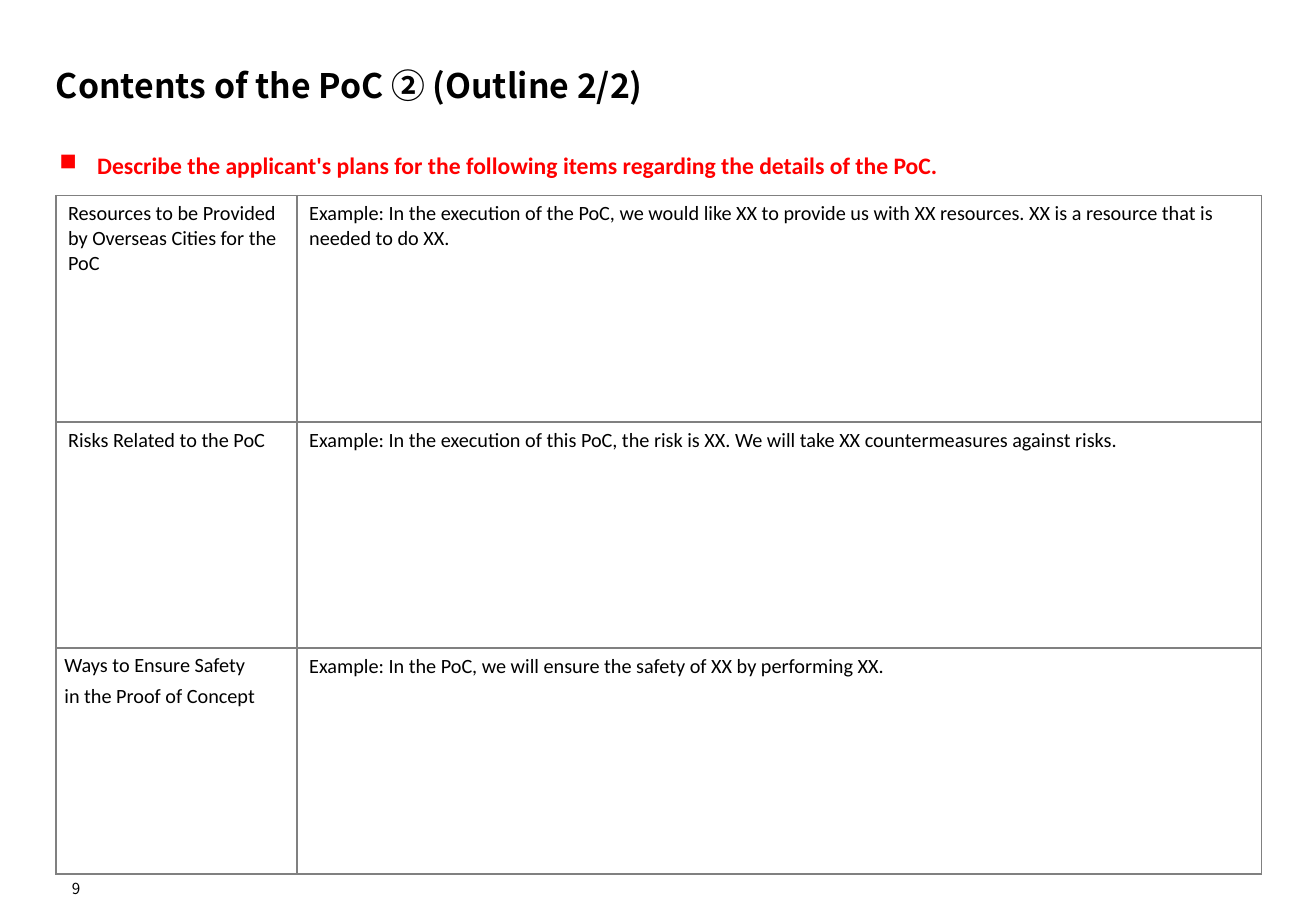
from dataclasses import dataclass

from lxml import etree
from pptx import Presentation
from pptx import util as u
from pptx.dml.color import RGBColor
from pptx.enum import text
from pptx.oxml import ns


@dataclass(frozen=True)
class Theme:
    head: str = "Noto Sans CJK JP"
    body: str = "Calibri"
    ink: str = "000000"
    alert: str = "FF0000"
    rule: str = "808080"
    paper: str = "FFFFFF"
    title: int = 20
    note: int = 14
    cell: int = 12
    number: int = 9


ROWS = [
    (["Resources to be Provided by Overseas Cities for the PoC"],
     ["Example: In the execution of the PoC, we would like XX to provide us with "
      "XX resources. XX is a resource that is needed to do XX."]),
    (["Risks Related to the PoC"],
     ["Example: In the execution of this PoC, the risk is XX. "
      "We will take XX countermeasures against risks."]),
    (["Ways to Ensure Safety", "in the Proof of Concept"],
     ["Example: In the PoC, we will ensure the safety of XX by performing XX."]),
]


def add(parent, tag, **attrs):
    return etree.SubElement(parent, ns.qn(tag), attrs)


class Page:
    """Draws on one slide; lengths are percentages of the slide's size."""

    def __init__(self, deck, theme):
        self.deck, self.theme = deck, theme
        self.slide = deck.slides.add_slide(deck.slide_layouts[6])

    def area(self, left, top, width, height):
        wide, high = self.deck.slide_width, self.deck.slide_height
        return [round(part * size / 100) for part, size in
                zip((left, top, width, height), (wide, high, wide, high))]

    def style(self, para, face, size, color, bold=False):
        font = para.font
        font.name, font.size, font.bold = face, u.Pt(size), bold
        font.color.rgb = RGBColor.from_string(color)
        add(para._p.pPr.find(ns.qn("a:defRPr")), "a:ea", typeface=face)

    def hang(self, para, inches):
        """Hang the first line to the left of the others."""
        props = para._p.get_or_add_pPr()
        props.set("marL", str(u.Inches(inches)))
        props.set("indent", str(-u.Inches(inches)))
        return props

    def label(self, words, area, anchor, inset=0, wrap=True):
        frame = self.slide.shapes.add_textbox(*self.area(*area)).text_frame
        frame.word_wrap, frame.vertical_anchor = wrap, anchor
        frame.margin_left = frame.margin_right = u.Inches(inset)
        frame.margin_top = frame.margin_bottom = u.Inches(inset)
        para = frame.paragraphs[0]
        para.text = words
        return para

    def title(self, words, area):
        para = self.label(words, area, text.MSO_ANCHOR.BOTTOM)
        self.style(para, self.theme.head, self.theme.title, self.theme.ink, True)

    def number(self, words, area):
        para = self.label(words, area, text.MSO_ANCHOR.BOTTOM, wrap=False)
        para.alignment = text.PP_ALIGN.RIGHT
        self.style(para, self.theme.head, self.theme.number, self.theme.ink)

    def note(self, words, area):
        para = self.label(words, area, text.MSO_ANCHOR.MIDDLE, 0.04)
        add(self.hang(para, 0.31), "a:buChar", char="■")
        self.style(para, self.theme.body, self.theme.note, self.theme.alert, True)

    def cell(self, cell, lines):
        props = cell._tc.get_or_add_tcPr()
        for side in "LRTB":
            line = add(props, f"a:ln{side}", w=str(u.Pt(1)))
            add(add(line, "a:solidFill"), "a:srgbClr", val=self.theme.rule)
        cell.fill.solid()
        cell.fill.fore_color.rgb = RGBColor.from_string(self.theme.paper)
        cell.text = "\n".join(lines)
        if len(lines) > 1:
            cell.margin_left = cell.margin_right = u.Inches(0.07)
            cell.margin_top = cell.margin_bottom = 0
        for para in cell.text_frame.paragraphs:
            if len(lines) > 1:
                self.hang(para, 0.15)
                para.alignment = text.PP_ALIGN.JUSTIFY
                para.line_spacing = u.Pt(18)
            self.style(para, self.theme.body, self.theme.cell, self.theme.ink)

    def table(self, rows, area, split):
        """Draw two columns, the first taking the given share of the width."""
        box = self.area(*area)
        table = self.slide.shapes.add_table(len(rows), 2, *box).table
        table.first_row = table.horz_banding = False
        first = round(box[2] * split)
        table.columns[0].width, table.columns[1].width = first, box[2] - first
        for row, items in zip(table.rows, rows):
            for cell, lines in zip(row.cells, items):
                self.cell(cell, lines)


def main():
    deck = Presentation()
    deck.slide_width, deck.slide_height = u.Inches(10.83), u.Inches(7.5)
    page = Page(deck, Theme())
    left, wide = 4.25, 91.6
    page.number("9", (left, 96, 1.85, 2.53))
    page.title("Contents of the PoC ② (Outline 2/2)", (left, 2.67, wide, 8.93))
    page.table(ROWS, (left, 21.47, wide, 74.5), 0.2)
    page.note("Describe the applicant's plans for the following items "
              "regarding the details of the PoC.", (4.15, 14.8, wide, 6.67))
    deck.save("out.pptx")


if __name__ == "__main__":
    main()
